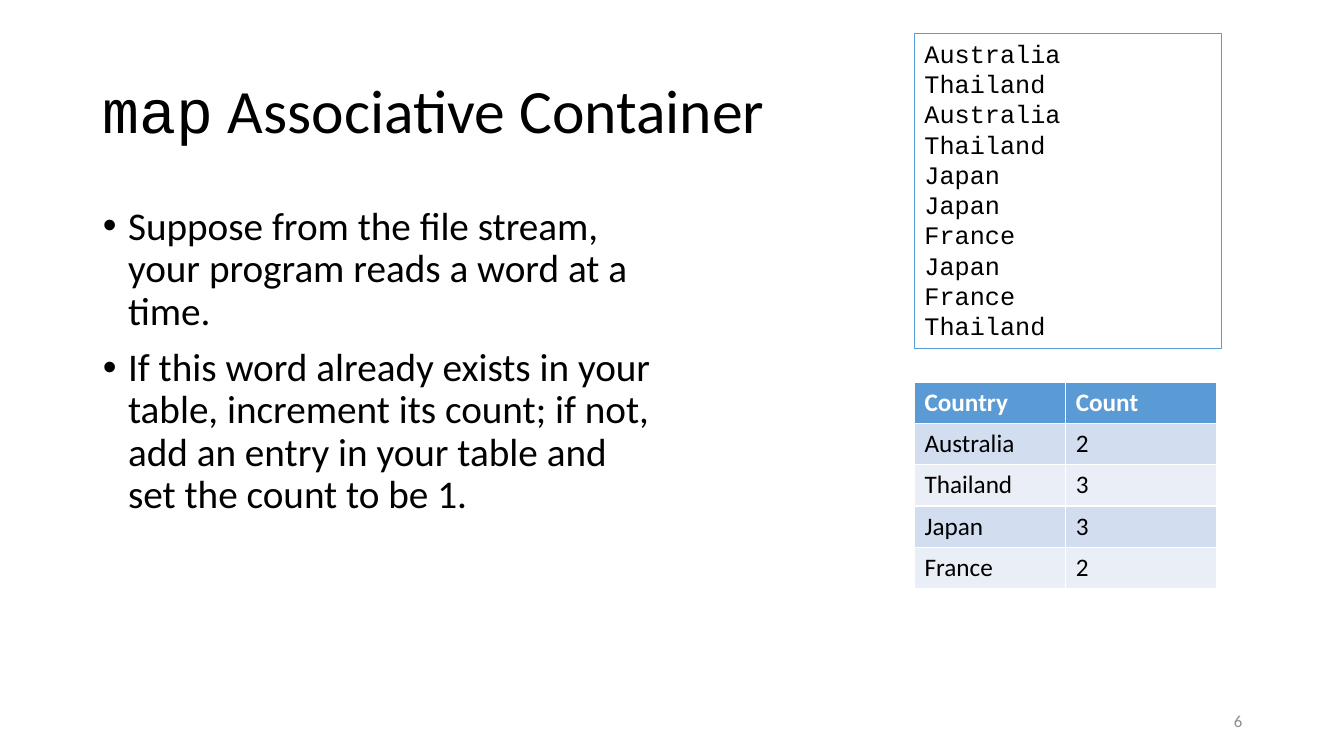
from collections import Counter

from pptx import Presentation
from pptx.dml.color import RGBColor
from pptx.enum.shapes import MSO_SHAPE
from pptx.enum.text import MSO_ANCHOR, MSO_AUTO_SIZE, PP_ALIGN
from pptx.util import Inches, Pt

# Content
TITLE = [("map", "Courier New"), (" Associative Container", "Calibri")]
POINTS = [
    "Suppose from the file stream, your program reads a word at a time.",
    "If this word already exists in your table, increment its count; "
    "if not, add an entry in your table and set the count to be 1.",
]
WORDS = ["Australia", "Thailand", "Australia", "Thailand", "Japan",
         "Japan", "France", "Japan", "France", "Thailand"]
COUNTS = [("Country", "Count"), *Counter(WORDS).items()]
PAGE = "6"

# Colours
BLACK = RGBColor(0x00, 0x00, 0x00)
WHITE = RGBColor(0xFF, 0xFF, 0xFF)
GREY = RGBColor(0x8C, 0x8C, 0x8C)
BLUE = RGBColor(0x5B, 0x9B, 0xD5)
BANDS = [RGBColor(0xEA, 0xEF, 0xF7), RGBColor(0xD2, 0xDE, 0xEF)]

# Layout in inches
WIDTH, HEIGHT = 13.33, 7.5
MARGIN = 0.92
RIGHT_COLUMN = 9.07
TABLE_COLUMN, TABLE_ROW = 1.5, 0.41

# Text formats
TITLE_FONT = {"size": Pt(44)}
POINT_FONT = {"name": "Calibri", "size": Pt(28)}
WORD_FONT = {"name": "Courier New", "size": Pt(18)}
HEAD_FONT = {"name": "Calibri", "size": Pt(18), "bold": True}
CELL_FONT = {"name": "Calibri", "size": Pt(18), "bold": False}
PAGE_FONT = {"name": "Calibri", "size": Pt(12)}
FRAME = {"word_wrap": True, "auto_size": MSO_AUTO_SIZE.NONE}
TITLE_LINES = {"alignment": PP_ALIGN.LEFT, "line_spacing": 0.9}
POINT_LINES = {"line_spacing": 0.9, "space_before": Pt(10)}


def apply(target, formats):
    for key, value in formats.items():
        setattr(target, key, value)


def place(part, left, top, width, height):
    apply(part, {"left": Inches(left), "top": Inches(top),
                 "width": Inches(width), "height": Inches(height)})


def write(paragraph, text, formats, colour=BLACK):
    run = paragraph.add_run()
    run.text = text
    apply(run.font, formats)
    run.font.color.rgb = colour


def write_lines(frame, lines, formats, line_formats):
    for index, line in enumerate(lines):
        paragraph = frame.add_paragraph() if index else frame.paragraphs[0]
        apply(paragraph, line_formats)
        write(paragraph, line, formats)


def main():
    deck = Presentation()
    deck.slide_width, deck.slide_height = Inches(WIDTH), Inches(HEIGHT)
    slide = deck.slides.add_slide(deck.slide_layouts[1])

    # Title
    title = slide.shapes.title
    place(title, MARGIN, 0.4, 11.5, 1.45)
    apply(title.text_frame, {**FRAME, "vertical_anchor": MSO_ANCHOR.MIDDLE})
    heading = title.text_frame.paragraphs[0]
    apply(heading, TITLE_LINES)
    for text, font in TITLE:
        write(heading, text, {**TITLE_FONT, "name": font})

    # Bulleted points
    points = slide.placeholders[1]
    place(points, MARGIN, 2, 5.67, 4.76)
    apply(points.text_frame, FRAME)
    write_lines(points.text_frame, POINTS, POINT_FONT, POINT_LINES)
    for point in points.text_frame.paragraphs:
        properties = point._p.get_or_add_pPr()
        properties.set("marL", str(Inches(0.25)))
        properties.set("indent", str(-Inches(0.25)))

    # Count table
    counts = slide.shapes.add_table(
        len(COUNTS), 2, Inches(RIGHT_COLUMN), Inches(3.79),
        Inches(2 * TABLE_COLUMN), Inches(len(COUNTS) * TABLE_ROW)).table
    for row, entry in enumerate(COUNTS):
        for column, value in enumerate(entry):
            cell = counts.cell(row, column)
            cell.fill.solid()
            cell.fill.fore_color.rgb = BANDS[row % 2] if row else BLUE
            write(cell.text_frame.paragraphs[0], str(value),
                  CELL_FONT if row else HEAD_FONT, BLACK if row else WHITE)

    # Page number
    page = slide.shapes.add_textbox(
        Inches(9.42), Inches(6.95), Inches(3), Inches(0.4))
    apply(page.text_frame, {**FRAME, "vertical_anchor": MSO_ANCHOR.MIDDLE})
    page_line = page.text_frame.paragraphs[0]
    page_line.alignment = PP_ALIGN.RIGHT
    write(page_line, PAGE, PAGE_FONT, GREY)

    # Words of the file stream
    stream = slide.shapes.add_shape(
        MSO_SHAPE.RECTANGLE, Inches(RIGHT_COLUMN), Inches(0.33),
        Inches(3.05), Inches(3.13))
    stream.shadow.inherit = False
    stream.fill.background()
    stream.line.color.rgb = BLUE
    stream.line.width = Pt(0.75)
    apply(stream.text_frame, {**FRAME, "vertical_anchor": MSO_ANCHOR.TOP})
    write_lines(stream.text_frame, WORDS, WORD_FONT,
                {"alignment": PP_ALIGN.LEFT})

    deck.save("out.pptx")


if __name__ == "__main__":
    main()
